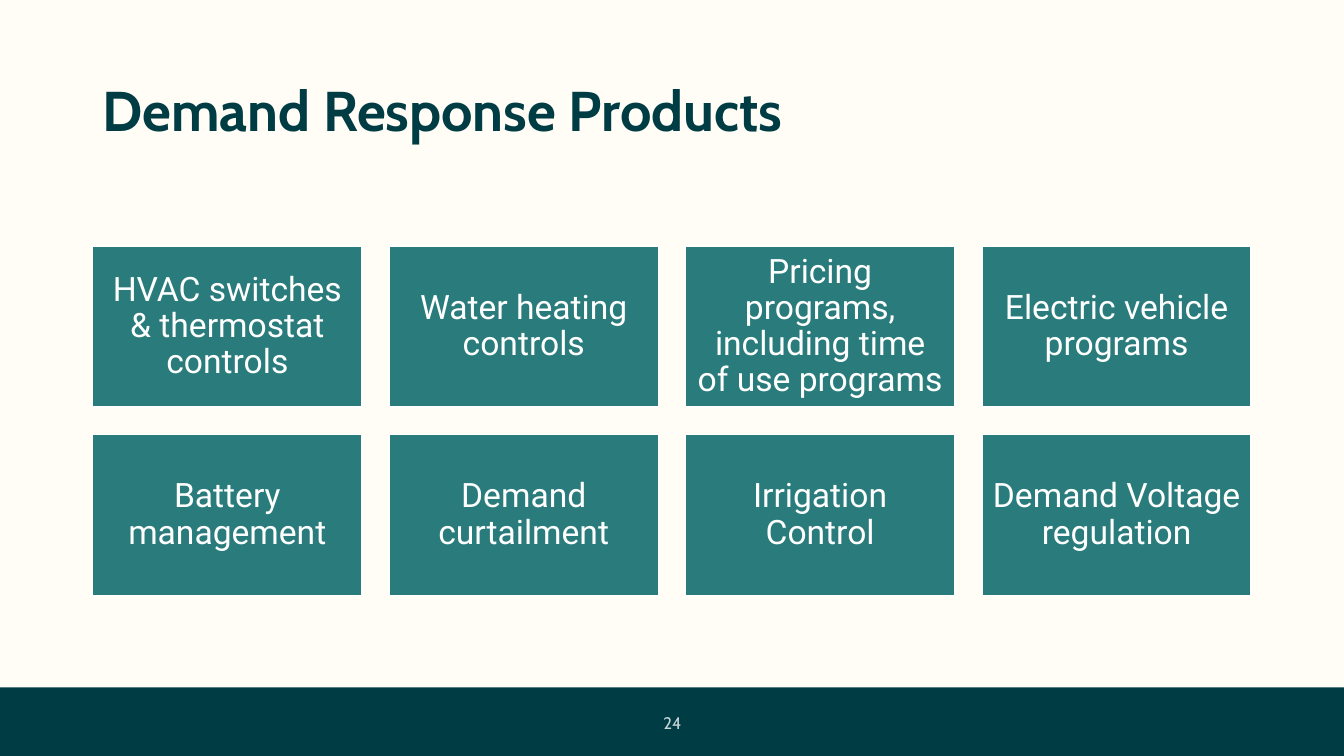
from dataclasses import dataclass

from lxml import etree
from pptx import Presentation
from pptx.dml.color import RGBColor
from pptx.enum.shapes import MSO_SHAPE
from pptx.enum.text import MSO_ANCHOR, PP_ALIGN
from pptx.oxml.ns import qn
from pptx.util import Inches, Pt

RECTANGLE = MSO_SHAPE.RECTANGLE
MIDDLE = MSO_ANCHOR.MIDDLE
LEFT, CENTER = PP_ALIGN.LEFT, PP_ALIGN.CENTER

PRODUCTS = [
    "HVAC switches & thermostat controls",
    "Water heating controls",
    "Pricing programs, including time of use programs",
    "Electric vehicle programs",
    "Battery management",
    "Demand curtailment",
    "Irrigation Control",
    "Demand Voltage regulation",
]
COLUMNS = 4
TILE_LEFT, TILE_TOP = 0.92, 2.44
TILE_WIDTH, TILE_HEIGHT = 2.67, 1.6
TILE_GAP = 0.27


@dataclass(frozen=True)
class Theme:
    """Colours, fonts and type sizes of the deck."""
    background: str = "FFFDF5"
    dark: str = "003C44"
    tile: str = "2A7C7C"
    white: str = "FFFFFF"
    pale: str = "F9FBFD"
    heading_font: str = "Cabin"
    body_font: str = "Roboto"
    title_size: int = 40
    tile_size: int = 24
    number_size: int = 12


def write_text(shape, text, *, font, size, color, bold=False, align=CENTER,
               line_spacing=0.9, opacity=100, insets=(0.1, 0.1, 0.1, 0.1)):
    """Write one formatted paragraph, vertically centred, into a shape."""
    frame = shape.text_frame
    frame.word_wrap = True
    frame.vertical_anchor = MIDDLE
    left, top, right, bottom = (Inches(inset) for inset in insets)
    frame.margin_left, frame.margin_top = left, top
    frame.margin_right, frame.margin_bottom = right, bottom
    para = frame.paragraphs[0]
    para.alignment = align
    para.line_spacing = line_spacing
    span = para.add_run()
    span.text = text
    span.font.name = font
    span.font.size = Pt(size)
    span.font.bold = bold
    span.font.color.rgb = RGBColor.from_string(color)
    if opacity < 100:
        tint = span.font.fill._xPr.find(".//" + qn("a:srgbClr"))
        etree.SubElement(tint, qn("a:alpha"), val=str(opacity * 1000))


class SlideBuilder:
    """Draws styled elements on the current slide."""

    def __init__(self, page, theme):
        """Keep the page and theme, and paint the background."""
        self.page = page
        self.theme = theme
        fill = page.background.fill
        fill.solid()
        fill.fore_color.rgb = RGBColor.from_string(theme.background)

    def rectangle(self, left, top, width, height, color, outline=None):
        """Add a filled rectangle with an optional outline."""
        box = self.page.shapes.add_shape(
            RECTANGLE, Inches(left), Inches(top), Inches(width), Inches(height))
        box.shadow.inherit = False
        box.fill.solid()
        box.fill.fore_color.rgb = RGBColor.from_string(color)
        if outline:
            box.line.color.rgb = RGBColor.from_string(outline)
            box.line.width = Pt(1)
        else:
            box.line.fill.background()
        return box

    def label(self, text, left, top, width, height, **style):
        """Add a text box with formatted text."""
        box = self.page.shapes.add_textbox(
            Inches(left), Inches(top), Inches(width), Inches(height))
        write_text(box, text, **style)

    def title(self, text):
        """Add the slide title."""
        self.label(text, 0.92, 0.4, 11.5, 1.45, font=self.theme.heading_font,
                   size=self.theme.title_size, color=self.theme.dark, bold=True,
                   align=LEFT, insets=(0.1, 0.05, 0.1, 0.05))

    def footer(self, number):
        """Add the footer band and the page number."""
        self.rectangle(0, 6.82, 13.33, 0.68, self.theme.dark)
        self.label(number, 6.32, 6.96, 0.6, 0.43, font=self.theme.heading_font,
                   size=self.theme.number_size, color=self.theme.pale, opacity=80,
                   line_spacing=1.0, insets=(0.1, 0.1, 0, 0.1))

    def tile(self, text, left, top):
        """Add one product tile."""
        box = self.rectangle(left, top, TILE_WIDTH, TILE_HEIGHT,
                             self.theme.tile, outline=self.theme.white)
        write_text(box, text, font=self.theme.body_font,
                   size=self.theme.tile_size, color=self.theme.white)


def main():
    """Build and save the deck."""
    deck = Presentation()
    deck.slide_width, deck.slide_height = Inches(13.33), Inches(7.5)
    builder = SlideBuilder(deck.slides.add_slide(deck.slide_layouts[6]), Theme())
    builder.footer("24")
    builder.title("Demand Response Products")
    for index, product in enumerate(PRODUCTS):
        row, column = divmod(index, COLUMNS)
        builder.tile(product,
                     TILE_LEFT + column * (TILE_WIDTH + TILE_GAP),
                     TILE_TOP + row * (TILE_HEIGHT + TILE_GAP))
    deck.save("out.pptx")


if __name__ == "__main__":
    main()
